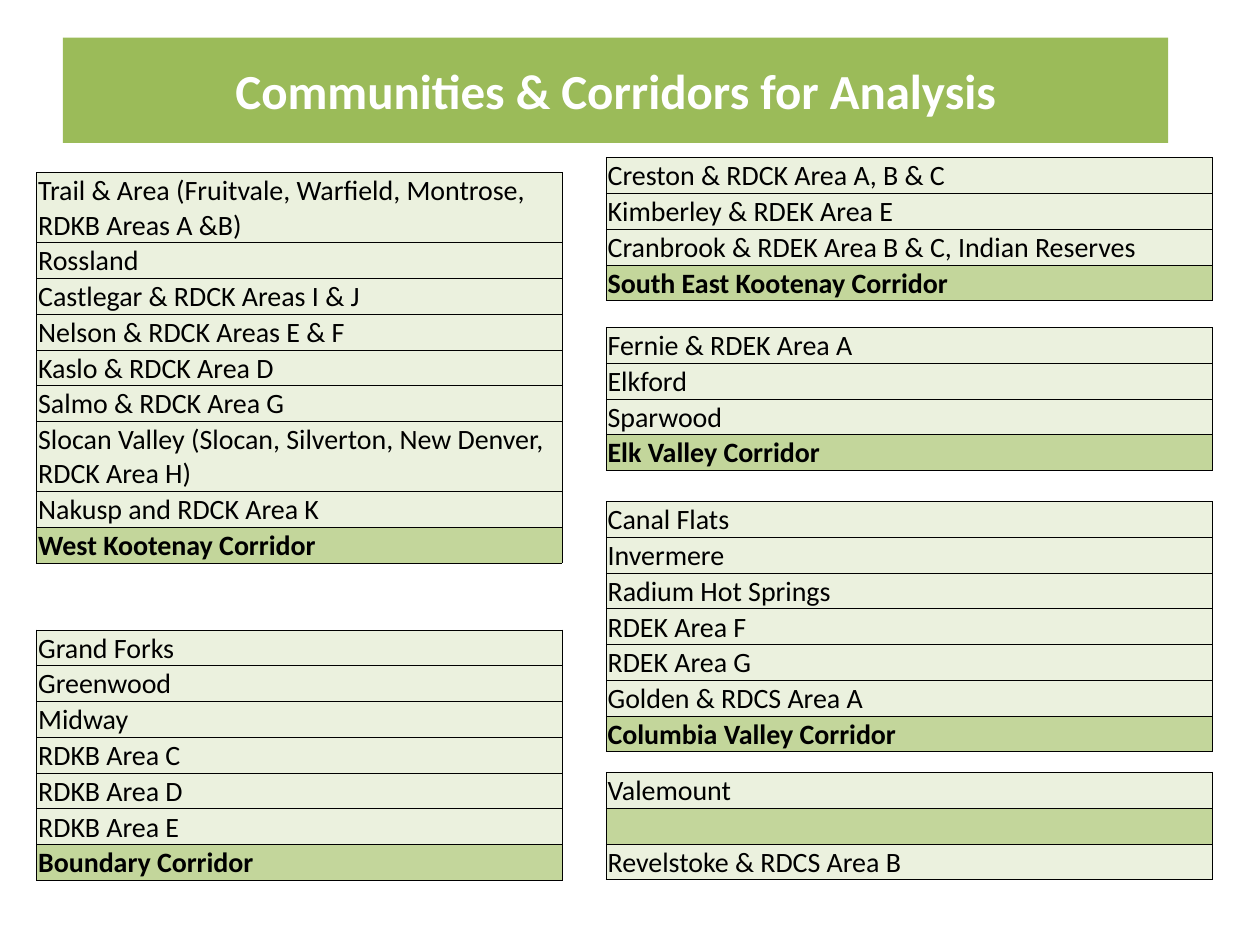
from dataclasses import dataclass

from lxml.etree import SubElement as Sub
from pptx import Presentation
from pptx.dml.color import RGBColor as Rgb
from pptx.enum.shapes import MSO_SHAPE as Shape
from pptx.enum.text import MSO_ANCHOR as Anchor, PP_ALIGN as Align
from pptx.oxml.ns import qn
from pptx.util import Cm, Pt


@dataclass(frozen=True)
class Theme:
    font: str = "Calibri"
    head: int = 28
    body: int = 16
    edge: float = 0.5
    green: str = "9BBB59"
    pale: str = "EBF1DE"
    mid: str = "C3D69B"
    ink: str = "000000"
    white: str = "FFFFFF"


T = Theme()
ROW, TALL = 0.71, 1.4  # row heights for one and two lines of text
LONG = 50  # more letters than this take two lines
LEFT, RIGHT = (0.74, 10.59), (12.22, 12.22)  # column left and width

# Column, top, places, corridor name
LISTS = [
    (LEFT, 3.48, [
        "Trail & Area (Fruitvale, Warfield, Montrose, RDKB Areas A &B)",
        "Rossland",
        "Castlegar & RDCK Areas I & J",
        "Nelson & RDCK Areas E & F",
        "Kaslo & RDCK Area D",
        "Salmo & RDCK Area G",
        "Slocan Valley (Slocan, Silverton, New Denver, RDCK Area H)",
        "Nakusp and RDCK Area K",
    ], "West Kootenay Corridor"),
    (LEFT, 12.7, [
        "Grand Forks", "Greenwood", "Midway",
        "RDKB Area C", "RDKB Area D", "RDKB Area E",
    ], "Boundary Corridor"),
    (RIGHT, 3.18, [
        "Creston & RDCK Area A, B & C",
        "Kimberley & RDEK Area E",
        "Cranbrook & RDEK Area B & C, Indian Reserves",
    ], "South East Kootenay Corridor"),
    (RIGHT, 6.6, [
        "Fernie & RDEK Area A", "Elkford", "Sparwood",
    ], "Elk Valley Corridor"),
    (RIGHT, 10.11, [
        "Canal Flats", "Invermere", "Radium Hot Springs",
        "RDEK Area F", "RDEK Area G", "Golden & RDCS Area A",
    ], "Columbia Valley Corridor"),
    (RIGHT, 15.57, ["Valemount", "", "Revelstoke & RDCS Area B"], None),
]


def write(para, text, size, color, bold=False):
    run = para.add_run()
    run.text = text
    font = run.font
    font.name, font.size, font.bold = T.font, Pt(size), bold
    font.color.rgb = Rgb.from_string(color)


def border(cell):
    props = cell._tc.get_or_add_tcPr()
    for side in ("a:lnL", "a:lnR", "a:lnT", "a:lnB"):
        line = Sub(props, qn(side), w=str(Pt(T.edge)))
        Sub(Sub(line, qn("a:solidFill")), qn("a:srgbClr"), val=T.ink)


def banner(slide, box, text):
    bar = slide.shapes.add_shape(Shape.RECTANGLE, *map(Cm, box))
    bar.shadow.inherit = False
    bar.fill.solid()
    bar.fill.fore_color.rgb = Rgb.from_string(T.green)
    bar.line.fill.background()
    frame = bar.text_frame
    frame.word_wrap = True
    frame.vertical_anchor = Anchor.MIDDLE
    para = frame.paragraphs[0]
    para.alignment = Align.CENTER
    write(para, text, T.head, T.white, True)


def fill_cell(cell, text, last):
    cell.margin_left = cell.margin_right = cell.margin_top = Cm(0.03)
    cell.margin_bottom = 0
    cell.vertical_anchor = Anchor.MIDDLE
    border(cell)
    cell.fill.solid()
    shade = T.mid if last or not text else T.pale
    cell.fill.fore_color.rgb = Rgb.from_string(shade)
    para = cell.text_frame.paragraphs[0]
    if text:
        write(para, text, T.body, T.ink, last)
    else:  # keep the blank row at body size
        Sub(para._p, qn("a:endParaRPr"), sz=str(T.body * 100))


def place_list(slide, box, places, name):
    left, top, width = box
    rows = places + ([name] if name else [])
    highs = [TALL if len(text) > LONG else ROW for text in rows]
    table = slide.shapes.add_table(
        len(rows), 1, Cm(left), Cm(top), Cm(width), Cm(sum(highs))).table
    table.first_row = table.horz_banding = False
    for i, (text, high) in enumerate(zip(rows, highs)):
        table.rows[i].height = Cm(high)
        fill_cell(table.cell(i, 0), text, text == name)


def main():
    deck = Presentation()
    deck.slide_width, deck.slide_height = Cm(25.4), Cm(19.05)
    slide = deck.slides.add_slide(deck.slide_layouts[6])

    # Title bar
    banner(slide, (1.27, 0.76, 22.28, 2.12),
           "Communities & Corridors for Analysis")

    # Lists of places, each closed by its corridor
    for (left, width), top, places, name in LISTS:
        place_list(slide, (left, top, width), places, name)

    deck.save("out.pptx")


if __name__ == "__main__":
    main()
